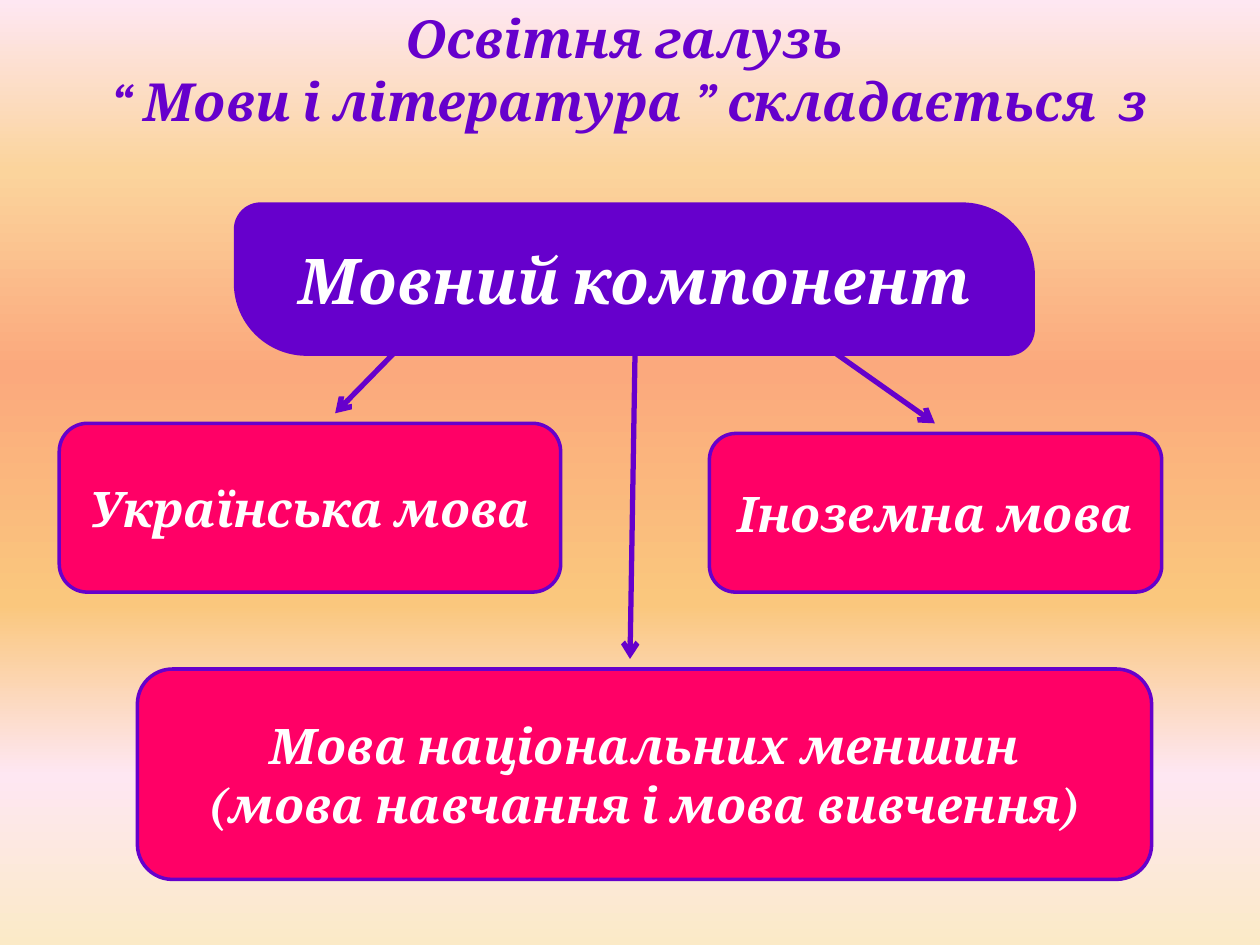
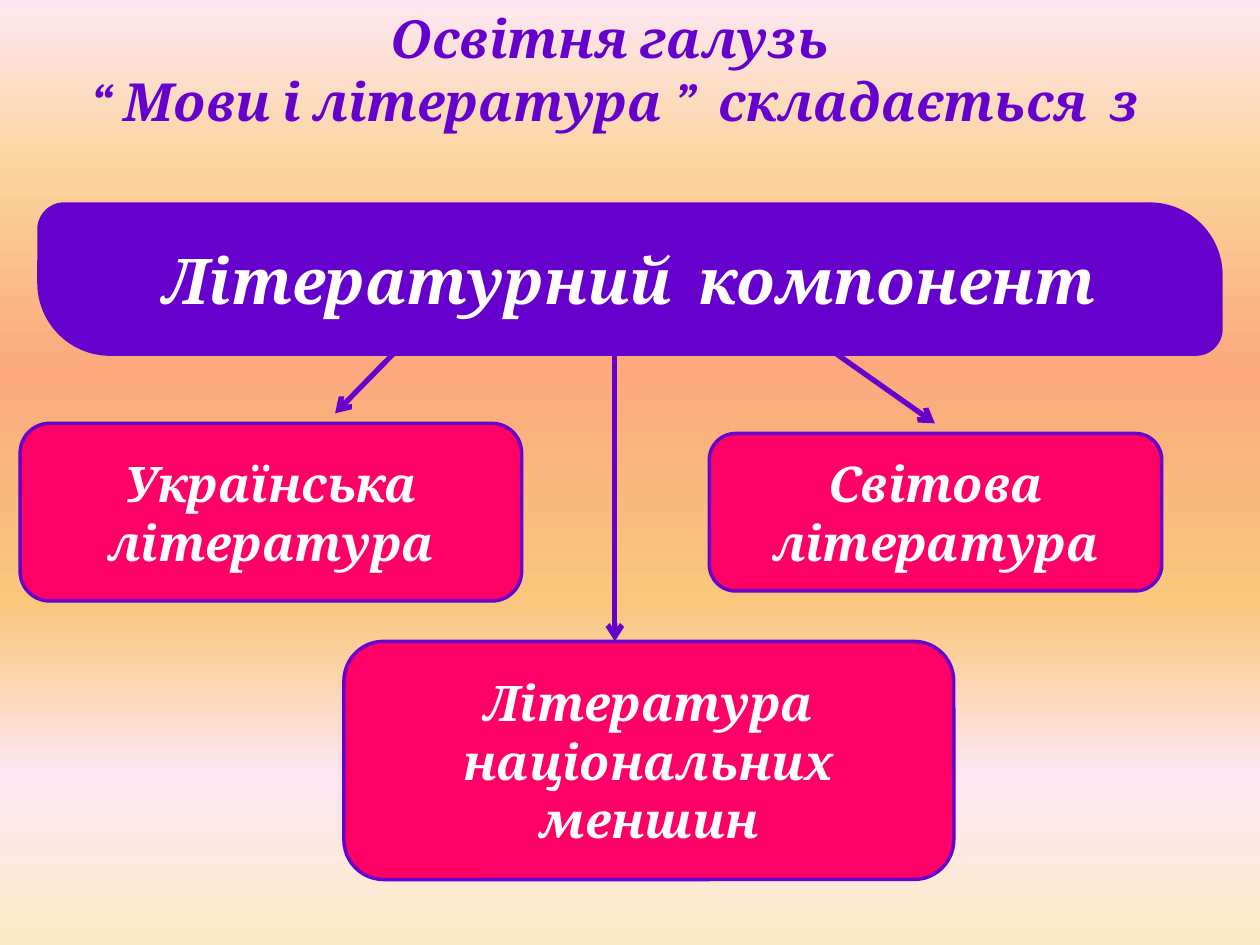
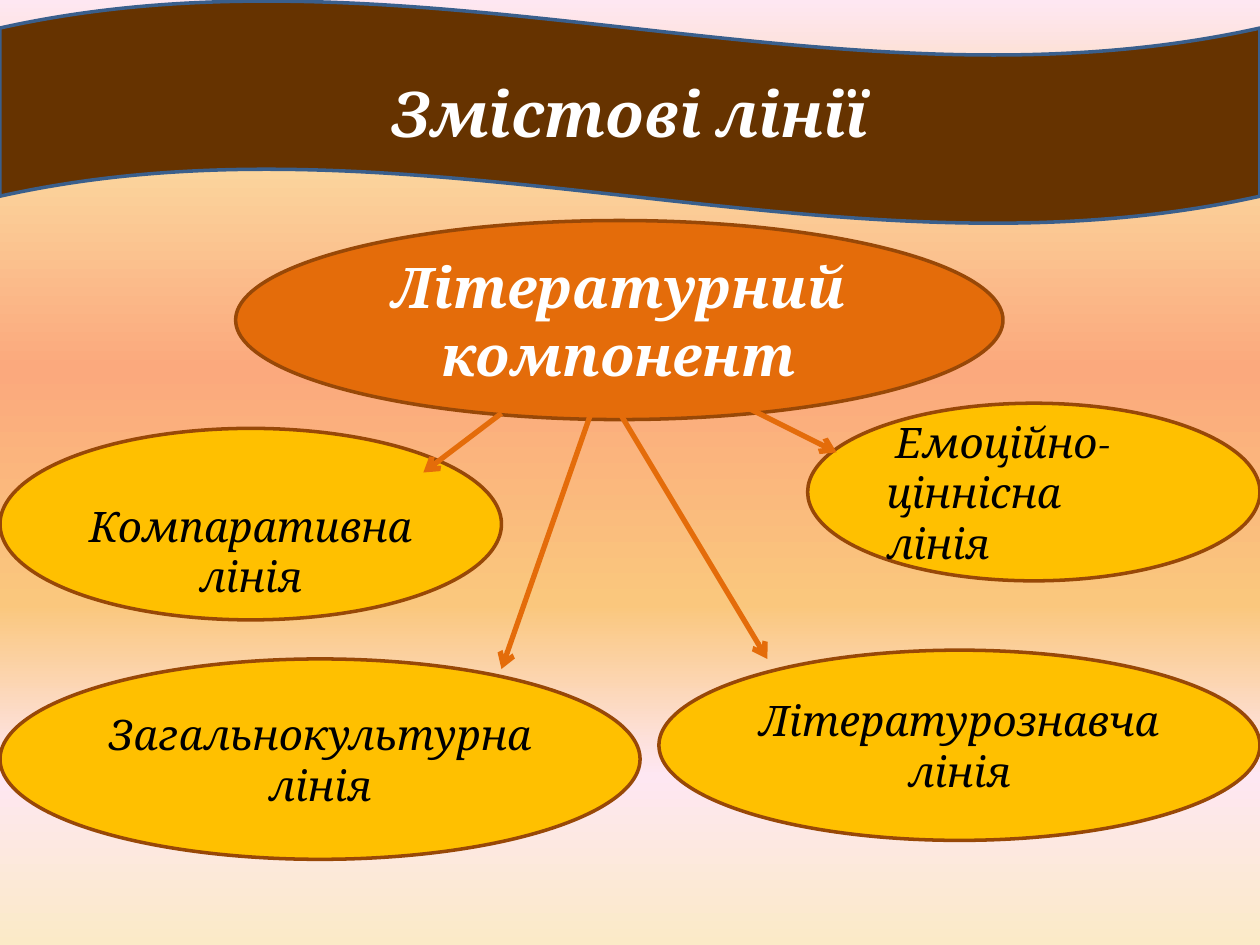
"""Three slides on the components of the language and literature curriculum."""
from pptx import Presentation
from pptx import util as u
from pptx.dml.color import RGBColor
from pptx.enum import shapes, text
from pptx.oxml.ns import qn
from lxml import etree

FONT = "Cambria"
WHITE, BLACK = "FFFFFF", "000000"
VIOLET, PINK = "6600CC", "FF0066"
BROWN, BLUE = "663300", "3A5F8C"
ORANGE, RUST, AMBER = "E46C0A", "984807", "FFC000"
BACKGROUND = [(0, "FBEAC7"), (18, "FEE7F2"), (36, "FAC77D"),
              (61, "FBA97D"), (82, "FBD49C"), (100, "FEE7F2")]
COLS, ROWS = 100, 75
CELL = u.Inches(0.1)
SHAPE = shapes.MSO_SHAPE
SIDE_ARROWS = [(31.2, 28.1, 26.6, 32.8), (66.4, 28.1, 74.2, 33.6)]


def rgb(value):
    """Turn a hex string into a colour."""
    return RGBColor.from_string(value)


def grid(*cells):
    """Turn grid columns and rows into lengths."""
    return [round(c * CELL) for c in cells]


def paint_background(master):
    """Give the master the vertical sunset gradient."""
    fill = master.background.fill
    fill.gradient()
    fill.gradient_angle = 90
    stops = next(master.element.iter(qn("a:gsLst")))
    for old in list(stops):
        stops.remove(old)
    for share, color in BACKGROUND:
        stop = etree.SubElement(stops, qn("a:gs"), pos=str(share * 1000))
        etree.SubElement(stop, qn("a:srgbClr"), val=color)


def write(tf, words, size, color, bold=True, align=text.PP_ALIGN.CENTER,
          anchor=text.MSO_ANCHOR.MIDDLE, before=0):
    """Fill a text frame and format its paragraphs and runs."""
    tf.text = words
    tf.word_wrap = True
    tf.auto_size = text.MSO_AUTO_SIZE.NONE
    tf.vertical_anchor = anchor
    for p in tf.paragraphs:
        p.alignment = align
        p.space_before = u.Pt(before)
        for r in p.runs:
            f = r.font
            f.name, f.size, f.bold, f.italic = FONT, u.Pt(size), bold, True
            f.color.rgb = rgb(color)


def add_title(s, words, box, size, color, anchor):
    """Place and format the title placeholder."""
    sp = s.shapes.title
    sp.left, sp.top, sp.width, sp.height = grid(*box)
    write(sp.text_frame, words, size, color, anchor=anchor)
    return sp


def add_box(s, kind, box, fill, line, adjust=()):
    """Draw a flat preset shape with a two-point outline."""
    sp = s.shapes.add_shape(kind, *grid(*box))
    sp.shadow.inherit = False
    sp.fill.solid()
    sp.fill.fore_color.rgb = rgb(fill)
    sp.line.color.rgb = rgb(line)
    sp.line.width = u.Pt(2)
    for i, value in enumerate(adjust):
        sp.adjustments[i] = value
    return sp


def add_arrow(s, ends, color):
    """Draw a straight three-point arrow."""
    cx = s.shapes.add_connector(shapes.MSO_CONNECTOR.STRAIGHT, *grid(*ends))
    cx.line.color.rgb = rgb(color)
    cx.line.width = u.Pt(3)
    spPr = cx.element.spPr
    etree.SubElement(spPr.find(qn("a:ln")), qn("a:tailEnd"), type="arrow")
    etree.SubElement(spPr, qn("a:effectLst"))


def add_branch(s, words, box):
    """Draw a pink rounded box."""
    sp = add_box(s, SHAPE.ROUNDED_RECTANGLE, box, PINK, VIOLET)
    write(sp.text_frame, words, 28, WHITE)


def add_line_oval(s, words, box, align=text.PP_ALIGN.CENTER, top=0.05):
    """Draw an amber oval that names one content line."""
    sp = add_box(s, SHAPE.OVAL, box, AMBER, RUST)
    sp.text_frame.margin_top = u.Inches(top)
    write(sp.text_frame, words, 24, BLACK, bold=False, align=align, before=4.8)


def component_slide(prs, title, title_width, head, head_box, branches, middle_arrow):
    """Build a slide where one component splits into three subjects."""
    s = prs.slides.add_slide(prs.slide_layouts[5])
    add_title(s, title, (0, 0, title_width, 11.1), 30, VIOLET, text.MSO_ANCHOR.TOP)
    sp = add_box(s, SHAPE.ROUND_2_DIAG_RECTANGLE, head_box, VIOLET, VIOLET,
                 (0.167, 0.475))
    write(sp.text_frame, head, 36, WHITE)
    for words, box in branches:
        add_branch(s, words, box)
    for ends in [middle_arrow] + SIDE_ARROWS:
        add_arrow(s, ends, VIOLET)


def content_lines_slide(prs):
    """Build the slide with the four content lines."""
    s = prs.slides.add_slide(prs.slide_layouts[5])
    band = (0, 0, COLS, 17.8)
    title = add_title(s, "Змістові лінії", band, 36, WHITE, text.MSO_ANCHOR.MIDDLE)
    wave = add_box(s, SHAPE.WAVE, band, BROWN, BLUE, (0.125, 0))
    title.element.addprevious(wave.element)
    sp = add_box(s, SHAPE.OVAL, (18.7, 17.5, 60.9, 15.8), ORANGE, RUST)
    write(sp.text_frame, "Літературний компонент", 32, WHITE)
    add_line_oval(s, "Літературознавча лінія", (52.3, 51.6, 47.7, 15.1))
    add_line_oval(s, " Емоційно-ціннісна\vлінія", (64.1, 32, 35.9, 14.1),
                  align=text.PP_ALIGN.LEFT)
    add_line_oval(s, "Загальнокультурна лінія", (0, 52.3, 50.8, 15.9))
    add_line_oval(s, "Компаративна лінія", (0, 34, 39.8, 15.2), top=0.47)
    for ends in [(39.8, 32.8, 33.6, 37.5), (46.9, 32.8, 39.8, 53.1),
                 (58.6, 32, 66.4, 35.9), (49.2, 32.8, 60.9, 52.3)]:
        add_arrow(s, ends, ORANGE)


def main():
    """Build and save the presentation."""
    prs = Presentation()
    prs.slide_width, prs.slide_height = grid(COLS, ROWS)
    paint_background(prs.slide_master)
    component_slide(
        prs, "Освітня галузь \v“ Мови і література ” складається  з", COLS,
        "Мовний компонент", (18.7, 16.2, 63.3, 11.9),
        [("Іноземна мова", (56.3, 34.4, 35.9, 12.6)),
         ("Українська мова", (4.7, 33.6, 39.8, 13.4)),
         ("Мова національних меншин\n(мова навчання і мова вивчення)",
          (10.9, 53.1, 80.5, 16.7))],
        (50.4, 28.1, 50, 52.3))
    component_slide(
        prs, "Освітня галузь \v“ Мови і література ”  складається  з", 97.7,
        "Літературний  компонент", (3.1, 16.2, 93.8, 11.9),
        [("Світова література", (56.3, 34.4, 35.9, 12.5)),
         ("Українська література", (1.6, 33.6, 39.8, 14.1)),
         ("Література національних меншин", (27.3, 50.9, 48.4, 18.9))],
        (48.8, 28.1, 48.8, 50.9))
    content_lines_slide(prs)
    prs.save("out.pptx")


if __name__ == "__main__":
    main()
